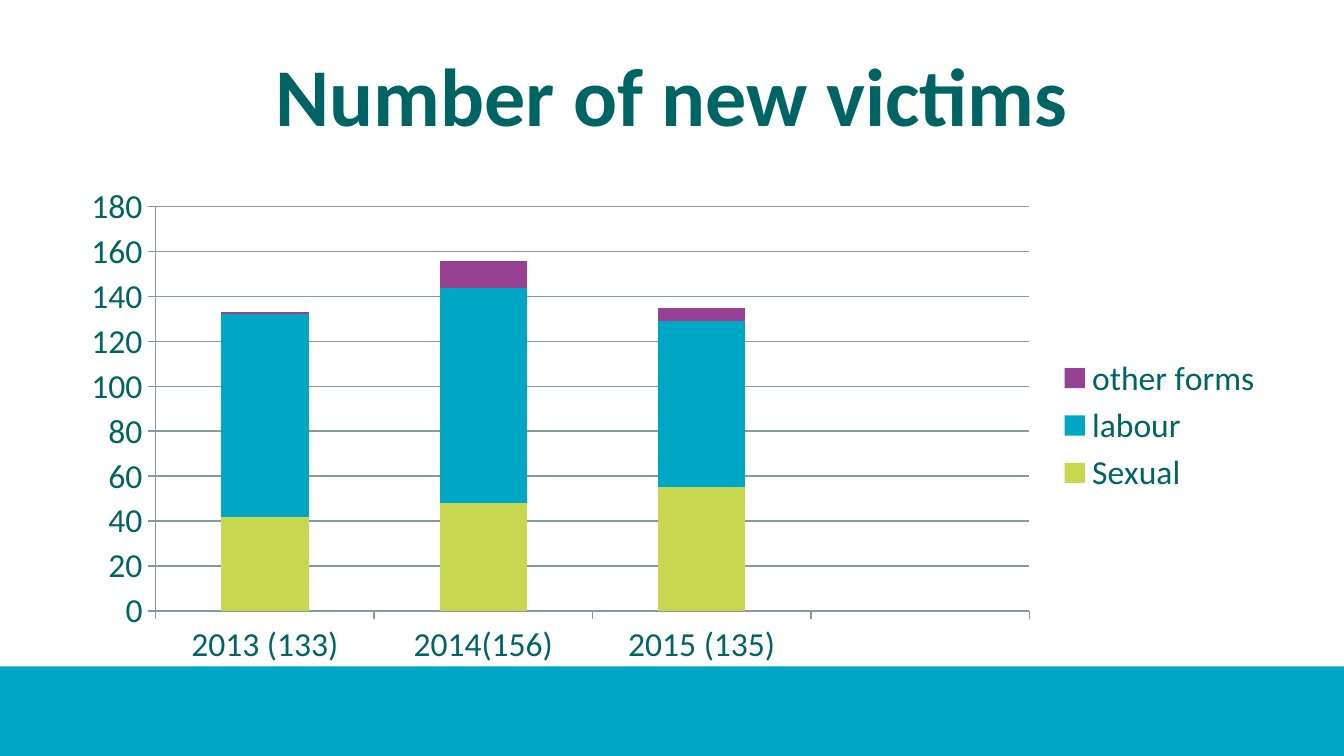
from pptx import Presentation
from pptx.chart.data import CategoryChartData
from pptx.dml.color import RGBColor
from pptx.enum.chart import XL_CHART_TYPE, XL_LEGEND_POSITION, XL_TICK_MARK
from pptx.enum.shapes import MSO_SHAPE
from pptx.enum.text import MSO_ANCHOR, PP_ALIGN
from pptx.util import Pt

FONT = "Calibri"
DARK, BLUE, GRID = "006464", "00A7C4", "869B9B"
CATEGORIES = ["2013 (133)", "2014(156)", "2015 (135)", ""]
SERIES = [
    ("Sexual", [42, 48, 55, None], "C8D750"),
    ("labour", [90, 96, 74, None], BLUE),
    ("other forms", [1, 12, 6, None], "964191"),
]


def color(target, value):
    target.rgb = RGBColor.from_string(value)


def set_font(font, size, bold=False):
    font.name, font.size, font.bold = FONT, Pt(size), bold
    color(font.color, DARK)


def add_band(s, x, y, w, h):
    band = s.shapes.add_shape(MSO_SHAPE.RECTANGLE, Pt(x), Pt(y), Pt(w), Pt(h))
    band.shadow.inherit = False
    band.fill.solid()
    color(band.fill.fore_color, BLUE)
    band.line.fill.background()


def add_title(s, text, x, y, w, h):
    title = s.shapes.title
    title.left, title.top, title.width, title.height = Pt(x), Pt(y), Pt(w), Pt(h)
    tf = title.text_frame
    tf.text = text
    tf.vertical_anchor = MSO_ANCHOR.MIDDLE
    p = tf.paragraphs[0]
    p.alignment = PP_ALIGN.CENTER
    set_font(p.font, 44, bold=True)


def add_victims_chart(s, x, y, w, h):
    data = CategoryChartData()
    data.categories = CATEGORIES
    for name, values, _ in SERIES:
        data.add_series(name, values)
    chart = s.shapes.add_chart(XL_CHART_TYPE.COLUMN_STACKED,
                               Pt(x), Pt(y), Pt(w), Pt(h), data).chart
    set_font(chart.font, 18)
    chart.has_title = False
    chart.has_legend = True
    chart.legend.position = XL_LEGEND_POSITION.RIGHT
    chart.legend.include_in_layout = False

    plot = chart.plots[0]
    plot.gap_width, plot.overlap = 150, 100
    plot.vary_by_categories = False
    for series, (_, _, fill) in zip(plot.series, SERIES):
        series.format.fill.solid()
        color(series.format.fill.fore_color, fill)

    value_axis = chart.value_axis
    value_axis.minimum_scale, value_axis.maximum_scale = 0, 180
    value_axis.major_unit = 20
    value_axis.has_major_gridlines = True
    for axis in (chart.category_axis, value_axis):
        axis.major_tick_mark = XL_TICK_MARK.OUTSIDE
    for part in (chart.category_axis, value_axis, value_axis.major_gridlines):
        part.format.line.width = Pt(0.75)
        color(part.format.line.color, GRID)


def main():
    prs = Presentation()
    prs.slide_width, prs.slide_height = Pt(720), Pt(405)
    s = prs.slides.add_slide(prs.slide_layouts[5])
    add_band(s, 0, 357, 720, 48)
    add_title(s, "Number of new victims", 36, 16.5, 648, 67.5)
    add_victims_chart(s, 36, 94.5, 648, 267)
    prs.save("out.pptx")


if __name__ == "__main__":
    main()
